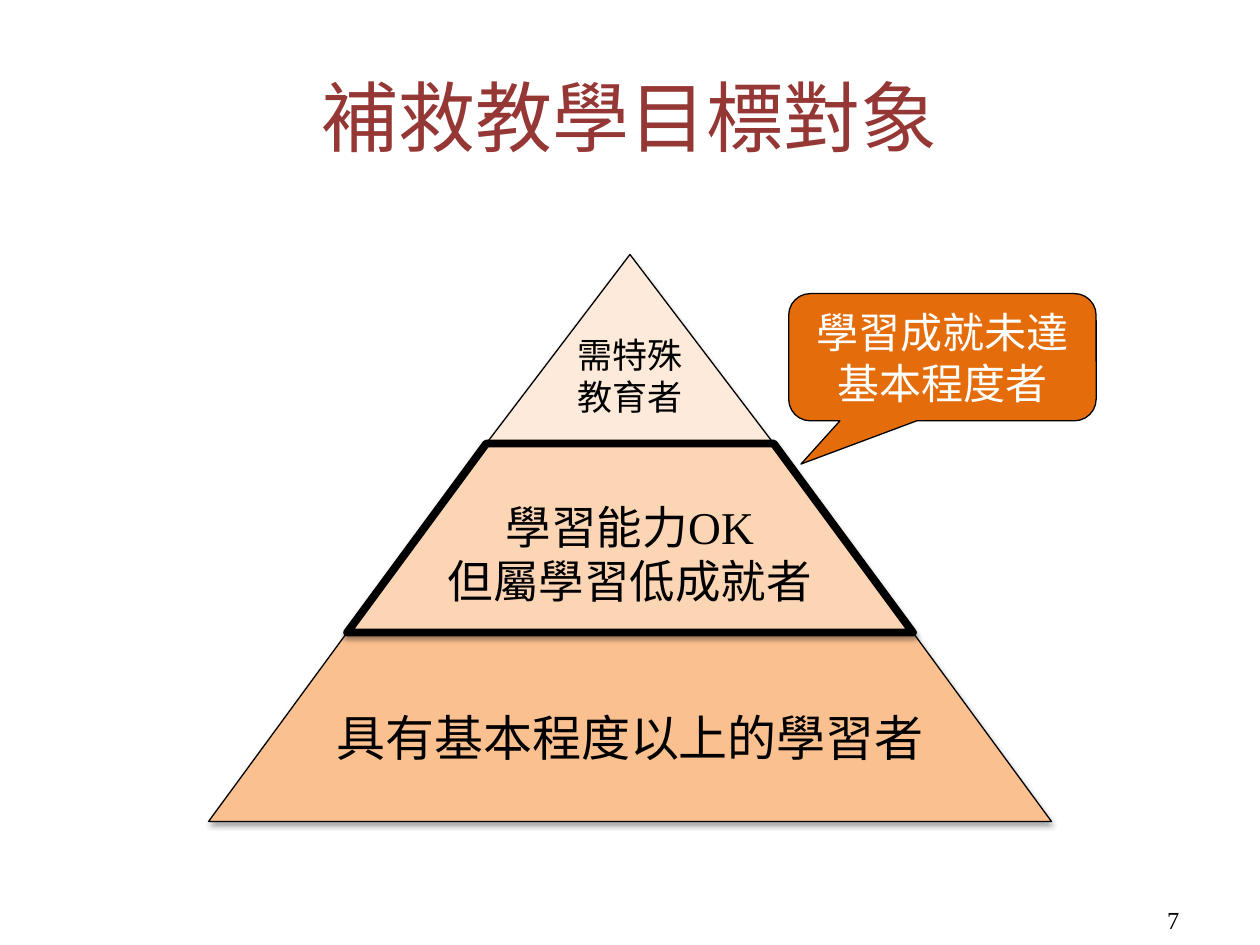
from lxml.etree import SubElement as Sub
from pptx import Presentation
from pptx.dml.color import RGBColor as RGB
from pptx.enum.shapes import MSO_SHAPE as Geo
from pptx.enum.text import MSO_ANCHOR as Anchor, PP_ALIGN as Align
from pptx.oxml.ns import qn
from pptx.util import Inches, Pt

THEME = {
    "title": "953735", "ink": "000000", "light": "FFFFFF", "callout": "E46C0A",
    "tiers": ["FDEADA", "FCD5B5", "FAC090"],
    "serif": "Times New Roman", "sans": "Arial", "cjk": "Noto Sans CJK SC",
    "head": 44, "page": 14, "tip": 24, "sizes": [20, 26, 28],
    "thin": 0.75, "thick": 4.5,
}
TITLE = "補救教學目標對象"
PAGE = "7"
TIERS = ["需特殊教育者", "學習能力OK\v但屬學習低成就者", "具有基本程度以上的學習者"]
TIP = "學習成就未達\n基本程度者"
WIDTHS = [2.28, 4.49, 6.69]
MID, TOP, STEP = 5, 2.02, 1.5
FOCUS = 1
ORDER = [0, 2, FOCUS]


def write(shape, text, size, font, color, align=Align.CENTER):
    """Fill a shape with wrapped, vertically centred text."""
    frame = shape.text_frame
    frame.text = text
    frame.word_wrap = True
    frame.vertical_anchor = Anchor.MIDDLE
    for para in frame.paragraphs:
        para.alignment = align
        for run in para.runs:
            run.font.size = Pt(size)
            run.font.name = font
            run.font.color.rgb = RGB.from_string(color)
    return frame


def label(slide, box, *style):
    """Add a text box."""
    write(slide.shapes.add_textbox(*map(Inches, box)), *style)


def block(slide, geo, box, fill, width, adjust=()):
    """Add a filled and outlined shape."""
    shape = slide.shapes.add_shape(geo, *map(Inches, box))
    shape.shadow.inherit = False
    shape.fill.solid()
    shape.fill.fore_color.rgb = RGB.from_string(fill)
    shape.line.color.rgb = RGB.from_string(THEME["ink"])
    shape.line.width = Pt(width)
    for i, value in enumerate(adjust):
        shape.adjustments[i] = value
    return shape


def shade(shape):
    """Give a shape a soft shadow below it."""
    effects = shape._element.spPr.find(qn("a:effectLst"))
    outer = Sub(effects, qn("a:outerShdw"), blurRad=str(Pt(3.1)),
                dist=str(Pt(1.8)), dir="5400000", rotWithShape="0")
    color = Sub(outer, qn("a:srgbClr"), val=THEME["ink"])
    Sub(color, qn("a:alpha"), val="35000")


def tier(slide, i):
    """Add one level of the pyramid."""
    wide = WIDTHS[i]
    box = (MID - wide / 2, TOP + i * STEP, wide, STEP)
    geo = Geo.TRAPEZOID if i else Geo.ISOSCELES_TRIANGLE
    slope = [(wide - WIDTHS[i - 1]) / 2 / STEP] if i else []
    line = THEME["thick"] if i == FOCUS else THEME["thin"]
    shape = block(slide, geo, box, THEME["tiers"][i], line, slope)
    shade(shape)
    frame = write(shape, TIERS[i], THEME["sizes"][i], THEME["sans"], THEME["ink"])
    if i == 0:
        frame.margin_bottom = Inches(0.38)
    if i == FOCUS:
        frame.margin_left = frame.margin_right = Inches(0.04)
        frame.paragraphs[0].runs[0].font.name = THEME["serif"]


def main():
    """Build the slide and save it."""
    deck = Presentation()
    deck.slide_width, deck.slide_height = Inches(10), Inches(7.5)
    slide = deck.slides.add_slide(deck.slide_layouts[6])
    label(slide, (0.5, 0.29, 9, 1.25), TITLE, THEME["head"], THEME["serif"], THEME["title"])
    label(slide, (7.13, 7.1, 2.33, 0.4), PAGE, THEME["page"], THEME["serif"],
          THEME["ink"], Align.RIGHT)
    for i in ORDER:
        tier(slide, i)
    tip = block(slide, Geo.ROUNDED_RECTANGULAR_CALLOUT, (6.26, 2.33, 2.44, 1.01),
                THEME["callout"], THEME["thin"], (-0.46, 0.84, 0.17))
    write(tip, TIP, THEME["tip"], THEME["cjk"], THEME["light"])
    deck.save("out.pptx")


if __name__ == "__main__":
    main()
